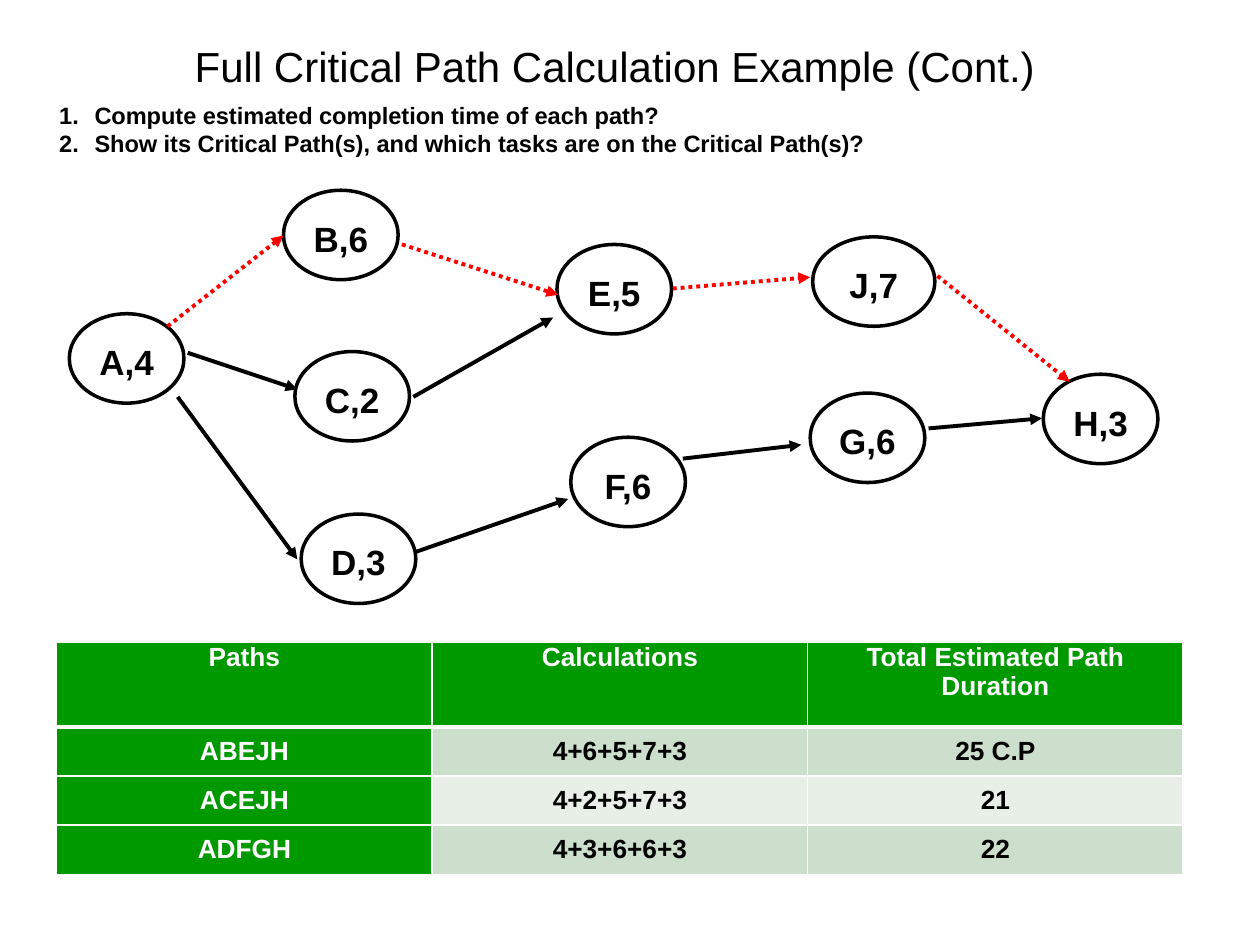
from lxml import etree
from pptx import Presentation
from pptx.dml.color import RGBColor
from pptx.enum.dml import MSO_LINE
from pptx.enum.shapes import MSO_CONNECTOR, MSO_SHAPE
from pptx.enum.text import MSO_ANCHOR, MSO_AUTO_SIZE, PP_ALIGN
from pptx.oxml.ns import qn
from pptx.util import Inches, Pt

CENTER, LEFT = PP_ALIGN.CENTER, PP_ALIGN.LEFT
TOP, MIDDLE = MSO_ANCHOR.TOP, MSO_ANCHOR.MIDDLE
NO_AUTOFIT = MSO_AUTO_SIZE.NONE
OVAL = MSO_SHAPE.FLOWCHART_CONNECTOR
STRAIGHT = MSO_CONNECTOR.STRAIGHT
DOTTED = MSO_LINE.ROUND_DOT

BLACK, WHITE, RED, GREEN = "000000", "FFFFFF", "FF0000", "009900"
BANDS = ("CCDECC", "E7EFE7")

TITLE = "Full Critical Path Calculation Example (Cont.)"
QUESTIONS = (
    "Compute estimated completion time of each path?",
    "Show its Critical Path(s), and which tasks are on the Critical Path(s)?",
)

# Task label, left, top, width
TASKS = (
    ("A,4", 0.55, 2.49, 0.91),
    ("B,6", 2.25, 1.51, 0.91),
    ("C,2", 2.34, 2.79, 0.91),
    ("D,3", 2.39, 4.08, 0.91),
    ("E,5", 4.42, 1.94, 0.91),
    ("F,6", 4.53, 3.47, 0.91),
    ("J,7", 6.45, 1.88, 0.97),
    ("G,6", 6.43, 3.12, 0.91),
    ("H,3", 8.28, 2.97, 0.91),
)

# Start and end points of the arrows
CRITICAL_ARROWS = (
    ((1.33, 2.59), (2.25, 1.87)),
    ((3.19, 1.94), (4.43, 2.34)),
    ((5.34, 2.29), (6.43, 2.2)),
    ((7.44, 2.19), (8.49, 3.03)),
)
OTHER_ARROWS = (
    ((1.49, 2.8), (2.36, 3.09)),
    ((1.41, 3.15), (2.36, 4.44)),
    ((3.28, 3.15), (4.39, 2.52)),
    ((3.3, 4.38), (4.51, 3.96)),
    ((5.42, 3.64), (6.36, 3.53)),
    ((7.37, 3.4), (8.27, 3.32)),
)

PATHS = (
    ("Paths", "Calculations", "Total Estimated Path Duration"),
    ("ABEJH", "4+6+5+7+3", "25 C.P"),
    ("ACEJH", "4+2+5+7+3", "21"),
    ("ADFGH", "4+3+6+6+3", "22"),
)


def color(value):
    return RGBColor.from_string(value)


class SlideBuilder:
    font_name = "Arial"

    def __init__(self, slide):
        self.slide = slide

    def format_paragraph(self, paragraph, size, text_color, bold=True, align=CENTER):
        paragraph.alignment = align
        for run in paragraph.runs:
            run.font.name = self.font_name
            run.font.size = Pt(size)
            run.font.bold = bold
            run.font.color.rgb = color(text_color)

    def place(self, shape, left, top, width, height, anchor):
        shape.left, shape.top = Inches(left), Inches(top)
        shape.width, shape.height = Inches(width), Inches(height)
        shape.text_frame.auto_size = NO_AUTOFIT
        shape.text_frame.vertical_anchor = anchor

    def title(self, text, *box):
        shape = self.slide.shapes.title
        self.place(shape, *box, MIDDLE)
        shape.text_frame.text = text
        self.format_paragraph(shape.text_frame.paragraphs[0], 24, BLACK, bold=False)

    def numbered_list(self, items, *box):
        shape = self.slide.placeholders[1]
        self.place(shape, *box, TOP)
        shape.text_frame.text = "\n".join(items)
        for paragraph in shape.text_frame.paragraphs:
            self.format_paragraph(paragraph, 13.5, BLACK, align=LEFT)
            paragraph.space_before = Pt(0)
            properties = paragraph._p.get_or_add_pPr()
            properties.set("marL", str(Inches(0.28)))
            properties.set("indent", str(Inches(-0.28)))
            etree.SubElement(properties, qn("a:buFont"), typeface="+mj-lt")
            etree.SubElement(properties, qn("a:buAutoNum"), type="arabicPeriod")

    def task(self, label, left, top, width, height=0.71):
        shape = self.slide.shapes.add_shape(
            OVAL, Inches(left), Inches(top), Inches(width), Inches(height))
        shape.shadow.inherit = False
        shape.fill.solid()
        shape.fill.fore_color.rgb = color(WHITE)
        shape.line.color.rgb = color(BLACK)
        shape.line.width = Pt(2)
        frame = shape.text_frame
        frame.margin_left = frame.margin_right = Inches(0.07)
        frame.margin_top = frame.margin_bottom = Inches(0.04)
        frame.vertical_anchor = MIDDLE
        frame.text = label
        paragraph = frame.paragraphs[0]
        paragraph.line_spacing = 1.15
        paragraph.space_after = Pt(7.5)
        self.format_paragraph(paragraph, 20, BLACK)

    def arrow(self, start, end, line_color, dash=None):
        points = [Inches(value) for value in start + end]
        connector = self.slide.shapes.add_connector(STRAIGHT, *points)
        connector.line.color.rgb = color(line_color)
        connector.line.width = Pt(2.25)
        if dash is not None:
            connector.line.dash_style = dash
        etree.SubElement(connector.line._get_or_add_ln(), qn("a:tailEnd"), type="triangle")
        etree.SubElement(connector._element.spPr, qn("a:effectLst"))

    def cell_borders(self, cell, top, bottom):
        properties = cell._tc.get_or_add_tcPr()
        sides = (("lnL", 1), ("lnR", 1), ("lnT", top), ("lnB", bottom))
        for position, (side, width) in enumerate(sides):
            border = etree.Element(qn("a:" + side), w=str(Pt(width)))
            fill = etree.SubElement(border, qn("a:solidFill"))
            etree.SubElement(fill, qn("a:srgbClr"), val=WHITE)
            properties.insert(position, border)

    def table(self, rows, left, top, width, row_heights):
        table = self.slide.shapes.add_table(
            len(rows), len(rows[0]), Inches(left), Inches(top),
            Inches(width), Inches(sum(row_heights))).table
        for row, height in zip(table.rows, row_heights):
            row.height = Inches(height)
        for row_index, row in enumerate(rows):
            for column_index, text in enumerate(row):
                is_header = row_index == 0
                is_green = is_header or column_index == 0
                cell = table.cell(row_index, column_index)
                cell.margin_left = cell.margin_right = Inches(0.06)
                cell.margin_top = cell.margin_bottom = 0
                cell.vertical_anchor = TOP if is_header else MIDDLE
                cell.fill.solid()
                cell.fill.fore_color.rgb = color(
                    GREEN if is_green else BANDS[(row_index - 1) % 2])
                cell.text_frame.text = text
                self.format_paragraph(
                    cell.text_frame.paragraphs[0], 15, WHITE if is_green else BLACK)
                self.cell_borders(
                    cell, top=3 if row_index == 1 else 1, bottom=3 if is_header else 1)


def main():
    presentation = Presentation()
    presentation.slide_width, presentation.slide_height = Inches(10), Inches(7.5)
    slide = presentation.slides.add_slide(presentation.slide_layouts[1])
    builder = SlideBuilder(slide)

    # Heading and questions
    builder.title(TITLE, 1.13, 0.21, 7.5, 0.62)
    builder.numbered_list(QUESTIONS, 0.37, 0.75, 8.75, 0.56)

    # Task network with the critical path dotted in red
    for task in TASKS:
        builder.task(*task)
    for start, end in CRITICAL_ARROWS:
        builder.arrow(start, end, RED, DOTTED)
    for start, end in OTHER_ARROWS:
        builder.arrow(start, end, BLACK)

    # Path durations
    builder.table(PATHS, 0.45, 5.1, 8.94, (0.67, 0.39, 0.39, 0.39))

    presentation.save("out.pptx")


if __name__ == "__main__":
    main()
